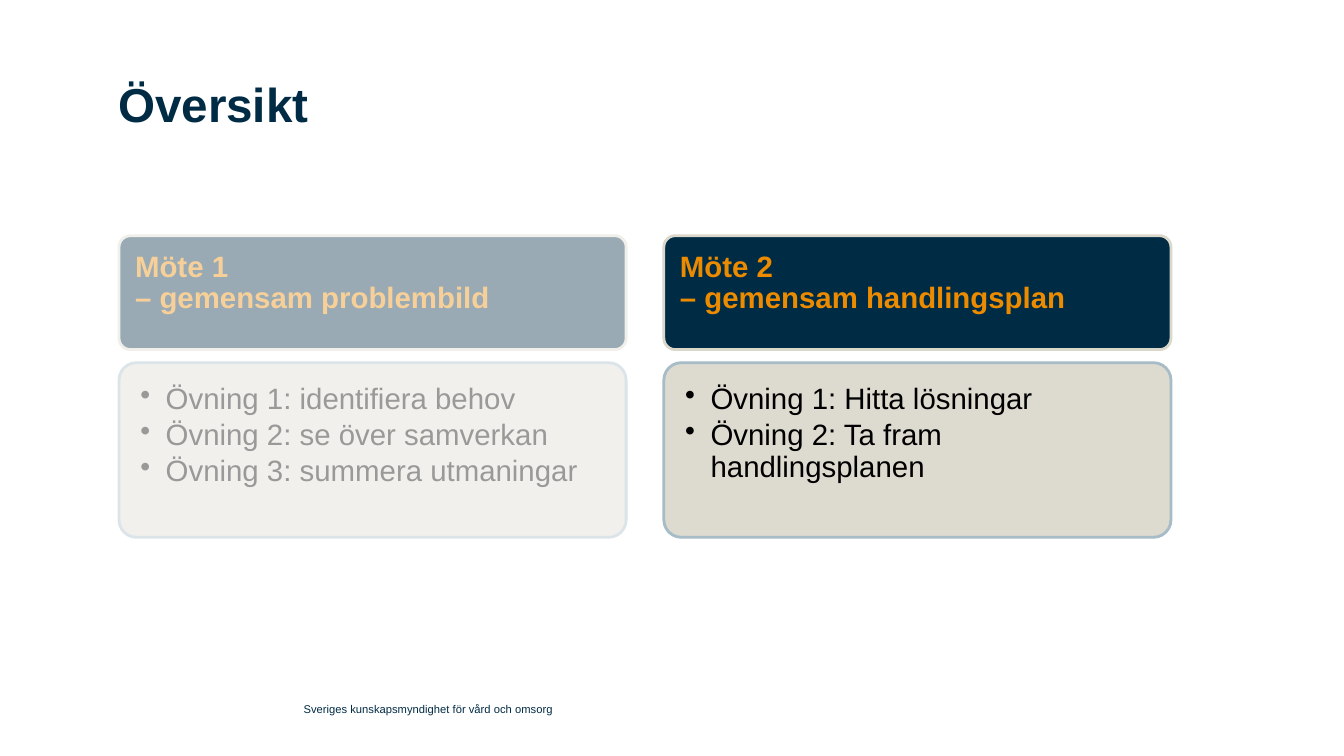
from dataclasses import dataclass

import lxml.etree
import pptx
import pptx.dml.color
import pptx.enum.shapes
import pptx.enum.text
import pptx.oxml.ns
import pptx.presentation
import pptx.shapes.autoshape
import pptx.slide
import pptx.text.text
import pptx.util
from pptx.util import Cm

COLORS = {
    "navy": "002B45",
    "orange": "ED8B00",
    "sand": "DAD7CB",
    "mist": "A6BCC6",
    "black": "000000",
    "white": "FFFFFF",
}
FONT = "Arial"
COLUMN_LEFT = 3.0
COLUMN_STEP = 13.73
COLUMN_WIDTH = 12.78


@dataclass(frozen=True)
class Meeting:
    """One meeting with its heading and exercises."""

    heading: str
    exercises: list[str]


@dataclass(frozen=True)
class Panel:
    """Placement and look of a rounded box."""

    top: float
    height: float
    margin: float
    fill: str
    line: str
    opacity: int


HEADER = Panel(5.94, 2.87, 0.32, "navy", "sand", 100)
BODY = Panel(9.14, 4.4, 0.41, "sand", "mist", 90)
MEETINGS = [
    Meeting(
        "Möte 1\v– gemensam problembild",
        [
            "Övning 1: identifiera behov",
            "Övning 2: se över samverkan",
            "Övning 3: summera utmaningar",
        ],
    ),
    Meeting(
        "Möte 2\v– gemensam handlingsplan",
        ["Övning 1: Hitta lösningar", "Övning 2: Ta fram handlingsplanen"],
    ),
]


def rgb(name: str) -> pptx.dml.color.RGBColor:
    """Return a named colour."""
    return pptx.dml.color.RGBColor.from_string(COLORS[name])


def set_font(
    para: pptx.text.text._Paragraph, size: int, color: str, bold: bool = False
) -> None:
    """Format a whole paragraph, aligned left."""
    para.alignment = pptx.enum.text.PP_ALIGN.LEFT
    para.font.name = FONT
    para.font.size = pptx.util.Pt(size)
    para.font.bold = bold
    para.font.color.rgb = rgb(color)


def set_frame(
    frame: pptx.text.text.TextFrame,
    margin: float,
    anchor: pptx.enum.text.MSO_ANCHOR,
) -> None:
    """Set equal margins, wrapping and anchor."""
    frame.margin_left = frame.margin_right = Cm(margin)
    frame.margin_top = frame.margin_bottom = Cm(margin)
    frame.word_wrap = True
    frame.auto_size = pptx.enum.text.MSO_AUTO_SIZE.NONE
    frame.vertical_anchor = anchor


def set_fill(
    box: pptx.shapes.autoshape.Shape, color: str, opacity: int
) -> None:
    """Fill a shape with a colour at an opacity in percent."""
    box.shadow.inherit = False
    box.fill.solid()
    box.fill.fore_color.rgb = rgb(color)
    if opacity < 100:
        tint = box.fill._xPr.find(".//" + pptx.oxml.ns.qn("a:srgbClr"))
        alpha = lxml.etree.SubElement(tint, pptx.oxml.ns.qn("a:alpha"))
        alpha.set("val", str(opacity * 1000))


def add_panel(
    page: pptx.slide.Slide, panel: Panel, left: float
) -> pptx.text.text.TextFrame:
    """Draw a rounded box and return its text frame."""
    box = page.shapes.add_shape(
        pptx.enum.shapes.MSO_SHAPE.ROUNDED_RECTANGLE,
        Cm(left), Cm(panel.top), Cm(COLUMN_WIDTH), Cm(panel.height),
    )
    box.adjustments[0] = 0.1
    set_fill(box, panel.fill, panel.opacity)
    box.line.color.rgb = rgb(panel.line)
    box.line.width = pptx.util.Pt(2)
    set_frame(box.text_frame, panel.margin, pptx.enum.text.MSO_ANCHOR.TOP)
    return box.text_frame


def add_bullet(para: pptx.text.text._Paragraph) -> None:
    """Give a paragraph a hanging bullet."""
    properties = para._p.get_or_add_pPr()
    properties.set("marL", str(Cm(0.64)))
    properties.set("indent", str(-Cm(0.64)))
    bullet = lxml.etree.SubElement(properties, pptx.oxml.ns.qn("a:buChar"))
    bullet.set("char", "•")


def add_meeting(page: pptx.slide.Slide, meeting: Meeting, left: float) -> None:
    """Draw the heading and exercises of a meeting."""
    heading = add_panel(page, HEADER, left).paragraphs[0]
    heading.text = meeting.heading
    heading.line_spacing = 0.9
    set_font(heading, 21, "orange", bold=True)
    frame = add_panel(page, BODY, left)
    for index, exercise in enumerate(meeting.exercises):
        para = frame.add_paragraph() if index else frame.paragraphs[0]
        para.text = exercise
        add_bullet(para)
        para.level = 1
        para.line_spacing = 0.9
        para.space_after = pptx.util.Pt(3)
        set_font(para, 21, "black")


def add_title(page: pptx.slide.Slide) -> None:
    """Place and format the title."""
    title = page.shapes.title
    title.left, title.top = Cm(2.98), Cm(1.9)
    title.width, title.height = Cm(25.75), Cm(3.6)
    title.text = "Översikt"
    set_frame(title.text_frame, 0, pptx.enum.text.MSO_ANCHOR.TOP)
    set_font(title.text_frame.paragraphs[0], 34, "navy", bold=True)


def add_footer(page: pptx.slide.Slide) -> None:
    """Add the line at the bottom."""
    box = page.shapes.add_textbox(Cm(7.65), Cm(17.5), Cm(15), Cm(0.74))
    set_frame(box.text_frame, 0, pptx.enum.text.MSO_ANCHOR.MIDDLE)
    para = box.text_frame.paragraphs[0]
    para.text = "Sveriges kunskapsmyndighet för vård och omsorg"
    set_font(para, 8, "navy")


def add_veil(page: pptx.slide.Slide) -> None:
    """Fade the first meeting."""
    veil = page.shapes.add_shape(
        pptx.enum.shapes.MSO_SHAPE.RECTANGLE,
        Cm(1.35), Cm(5.5), Cm(15), Cm(8.7),
    )
    set_fill(veil, "white", 60)
    veil.line.fill.background()


def main() -> None:
    """Build and save the slide."""
    deck: pptx.presentation.Presentation = pptx.Presentation()
    deck.slide_width, deck.slide_height = Cm(33.87), Cm(19.05)
    page = deck.slides.add_slide(deck.slide_layouts.get_by_name("Title Only"))
    add_title(page)
    add_footer(page)
    for index, meeting in enumerate(MEETINGS):
        add_meeting(page, meeting, COLUMN_LEFT + index * COLUMN_STEP)
    add_veil(page)
    deck.save("out.pptx")


if __name__ == "__main__":
    main()
